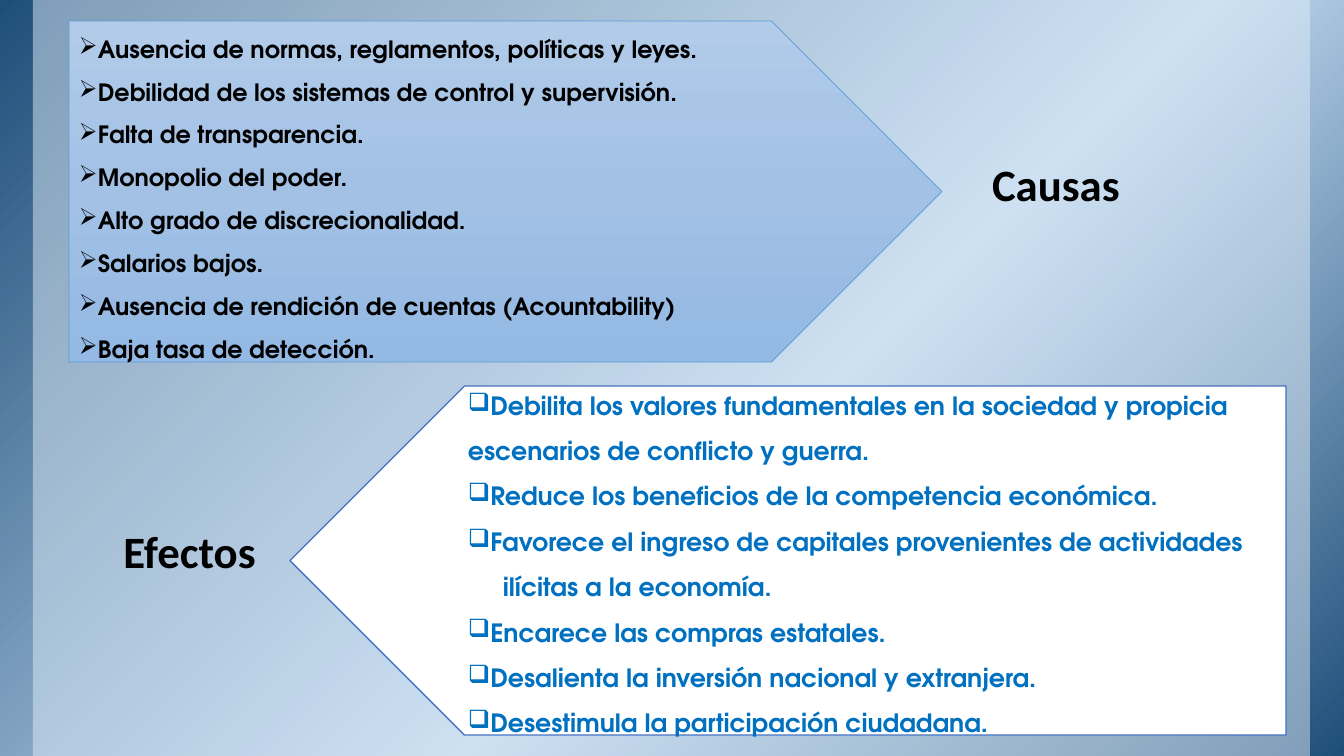
import pptx
import pptx.dml.color
import pptx.enum.shapes
import pptx.enum.text
import pptx.oxml
import pptx.oxml.ns
import pptx.util
from dataclasses import dataclass

EMU_PER_PX = 914400 / 100.8
SHAPES = pptx.enum.shapes.MSO_SHAPE
ANCHOR = pptx.enum.text.MSO_ANCHOR
ALIGN = pptx.enum.text.PP_ALIGN
AUTO_SIZE = pptx.enum.text.MSO_AUTO_SIZE


@dataclass(frozen=True)
class Theme:
    title_font: str = "Calibri"
    list_font: str = "TeX Gyre Adventor"
    title_size: int = 32
    causes_size: int = 17
    effects_size: int = 18
    black: str = "000000"
    white: str = "FFFFFF"
    effects_text: str = "0070C0"
    causes_line: str = "5B9BD5"
    effects_line: str = "4472C4"
    panel: str = "DEEBF7"
    backdrop: tuple = ((0, "1F4E79"), (58, "BDD7EE"), (100, "1F4E79"))
    causes_fill: tuple = ((0, "B1CBE9"), (50, "A3C1E5"), (100, "93B9E4"))


THEME = Theme()

CAUSES = [
    "Ausencia de normas, reglamentos, políticas y leyes.",
    "Debilidad de los sistemas de control y supervisión.",
    "Falta de transparencia.",
    "Monopolio del poder.",
    "Alto grado de discrecionalidad.",
    "Salarios bajos.",
    "Ausencia de rendición de cuentas (Acountability)",
    "Baja tasa de detección.",
]
CONTINUATION = "ilícitas a la economía."
EFFECTS = [
    "Debilita los valores fundamentales en la sociedad y propicia escenarios de conflicto y guerra.",
    "Reduce los beneficios de la competencia económica.",
    "Favorece el ingreso de capitales provenientes de actividades",
    CONTINUATION,
    "Encarece las compras estatales.",
    "Desalienta la inversión nacional y extranjera.",
    "Desestimula la participación ciudadana.",
]


def px(length):
    return pptx.util.Emu(round(length * EMU_PER_PX))


def rgb(color):
    return pptx.dml.color.RGBColor.from_string(color)


def apply_format(target, values):
    for name, value in values.items():
        setattr(target, name, value)


def add_shape(page, kind, area, fill=None, line=None, line_width=1):
    shape = page.shapes.add_shape(kind, *map(px, area))
    shape.shadow.inherit = False
    if fill:
        shape.fill.solid()
        shape.fill.fore_color.rgb = rgb(fill)
    if line:
        shape.line.color.rgb = rgb(line)
        shape.line.width = pptx.util.Pt(line_width)
    else:
        shape.line.fill.background()
    return shape


def set_gradient(shape, stops, angle):
    shape.fill.background()
    marks = "".join(
        f'<a:gs pos="{place * 1000}"><a:srgbClr val="{color}"/></a:gs>'
        for place, color in stops
    )
    gradient = pptx.oxml.parse_xml(
        f'<a:gradFill {pptx.oxml.ns.nsdecls("a")} rotWithShape="1">'
        f'<a:gsLst>{marks}</a:gsLst>'
        f'<a:lin ang="{angle * 60000}" scaled="0"/></a:gradFill>'
    )
    properties = shape.element.spPr
    empty_fill = properties.find(pptx.oxml.ns.qn("a:noFill"))
    properties.replace(empty_fill, gradient)


def set_transparency(shape, opacity):
    color = shape.element.spPr.find(".//" + pptx.oxml.ns.qn("a:srgbClr"))
    alpha = pptx.oxml.parse_xml(
        f'<a:alpha {pptx.oxml.ns.nsdecls("a")} val="{opacity * 1000}"/>'
    )
    color.append(alpha)


def set_bullet(para, symbol, margin=0, indent=0):
    properties = para._p.get_or_add_pPr()
    properties.set("marL", str(px(margin)))
    properties.set("indent", str(px(indent)))
    tag = f'a:buChar {pptx.oxml.ns.nsdecls("a")} char="{symbol}"' if symbol else (
        f'a:buNone {pptx.oxml.ns.nsdecls("a")}'
    )
    properties.append(pptx.oxml.parse_xml(f"<{tag}/>"))


def write_span(para, text, font, size, color):
    span = para.add_run()
    span.text = text
    apply_format(span.font, {"name": font, "size": pptx.util.Pt(size), "bold": True})
    span.font.color.rgb = rgb(color)


def add_title(page, area, text, frame_format):
    box = page.shapes.add_textbox(*map(px, area))
    apply_format(box.text_frame, {"word_wrap": True, **frame_format})
    para = box.text_frame.paragraphs[0]
    para.alignment = ALIGN.CENTER
    write_span(para, text, THEME.title_font, THEME.title_size, THEME.black)


def write_list(frame, items, symbol, size, color, indent=0):
    for index, item in enumerate(items):
        para = frame.add_paragraph() if index else frame.paragraphs[0]
        if item == CONTINUATION:
            set_bullet(para, None, margin=35)
        else:
            set_bullet(para, symbol, indent=indent)
        apply_format(para, {"alignment": ALIGN.LEFT, "line_spacing": 1.5})
        write_span(para, item, THEME.list_font, size, color)


def add_backdrop(page):
    backdrop = add_shape(page, SHAPES.RECTANGLE, (0, 0, 1344, 756))
    set_gradient(backdrop, THEME.backdrop, 45)
    panel = add_shape(page, SHAPES.RECTANGLE, (33, 0, 1277, 756), THEME.panel)
    set_transparency(panel, 50)


def add_causes(page):
    add_title(page, (806, 156, 500, 55), "Causas", {"vertical_anchor": ANCHOR.MIDDLE})
    arrow = add_shape(page, SHAPES.PENTAGON, (69, 21, 873, 341),
                      line=THEME.causes_line, line_width=0.5)
    set_gradient(arrow, THEME.causes_fill, 90)
    apply_format(arrow.text_frame, {"word_wrap": True, "vertical_anchor": ANCHOR.MIDDLE})
    write_list(arrow.text_frame, CAUSES, "➢", THEME.causes_size, THEME.black)


def add_effects(page):
    growing = {"auto_size": AUTO_SIZE.SHAPE_TO_FIT_TEXT}
    add_title(page, (3, 519, 373, 65), "Efectos", growing)
    arrow = add_shape(page, SHAPES.PENTAGON, (290, 386, 996, 349),
                      THEME.white, THEME.effects_line)
    arrow.rotation = 180
    box = page.shapes.add_textbox(*map(px, (458, 370, 830, 377)))
    apply_format(box.text_frame, {"word_wrap": True, **growing})
    write_list(box.text_frame, EFFECTS, "❑", THEME.effects_size,
               THEME.effects_text, indent=-38)


def main():
    deck = pptx.Presentation()
    apply_format(deck, {"slide_width": px(1344), "slide_height": px(756)})
    page = deck.slides.add_slide(deck.slide_layouts[6])
    add_backdrop(page)
    add_causes(page)
    add_effects(page)
    deck.save("out.pptx")


if __name__ == "__main__":
    main()
